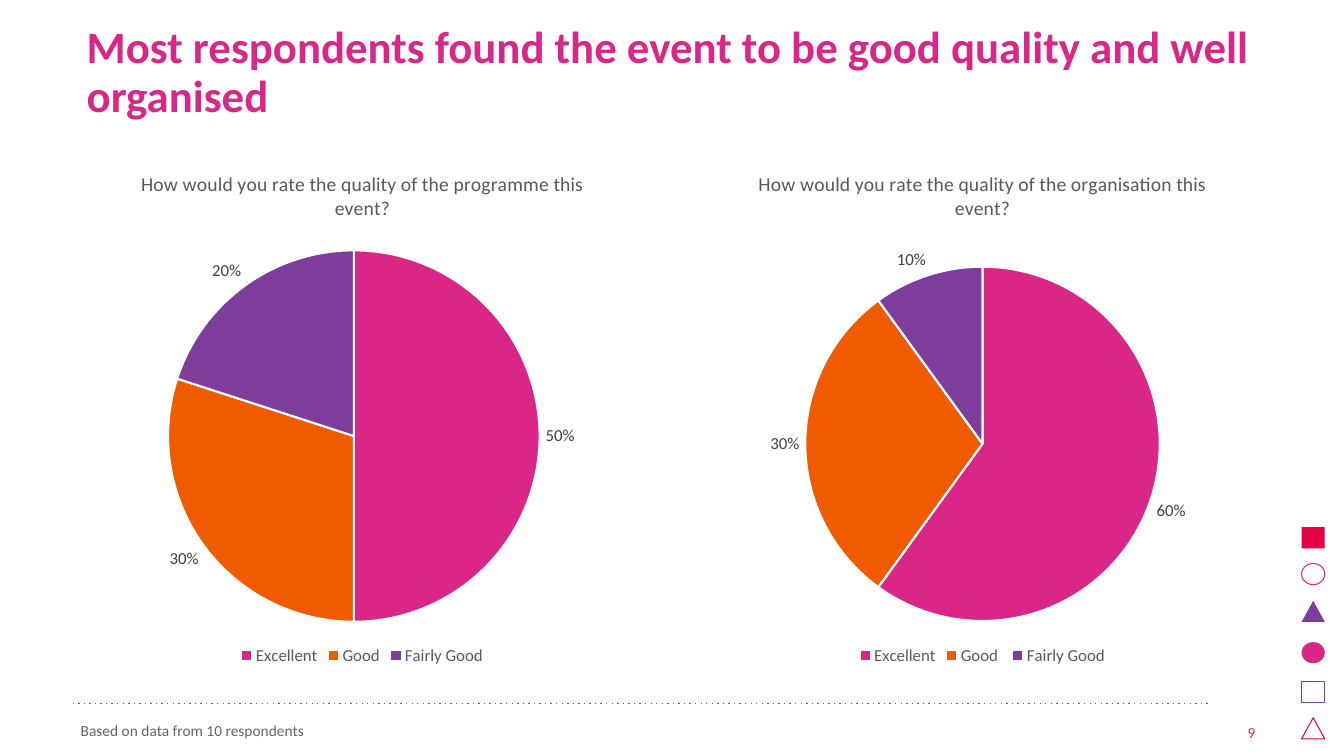
from lxml import etree
from pptx import Presentation
from pptx.chart.data import CategoryChartData
from pptx.dml.color import RGBColor
from pptx.enum.chart import XL_CHART_TYPE, XL_LABEL_POSITION, XL_LEGEND_POSITION
from pptx.enum.shapes import MSO_CONNECTOR, MSO_SHAPE
from pptx.enum.text import MSO_ANCHOR, MSO_AUTO_SIZE, PP_ALIGN
from pptx.oxml import parse_xml
from pptx.oxml.ns import nsdecls, qn
from pptx.util import Pt

PX = 9144  # 100 px to the inch
RECT, OVAL, TRIANGLE = MSO_SHAPE.RECTANGLE, MSO_SHAPE.OVAL, MSO_SHAPE.ISOSCELES_TRIANGLE
PIE, BOTTOM, OUTSIDE = XL_CHART_TYPE.PIE, XL_LEGEND_POSITION.BOTTOM, XL_LABEL_POSITION.OUTSIDE_END
PINK, ORANGE, PURPLE, RED = "DA2686", "F05B00", "7E3C9B", "E50043"
GREY, WHITE = "646464", "FFFFFF"


def style(font, size, color, bold=False):
    font.name, font.size, font.bold = "Calibri", Pt(size), bold
    font.color.rgb = RGBColor.from_string(color)


def write(box, bounds, text, size, color, anchor, bold=False):
    """Place a text shape and fill it with one formatted run."""
    box.left, box.top, box.width, box.height = [v * PX for v in bounds]
    frame = box.text_frame
    frame.word_wrap = True
    frame.auto_size = MSO_AUTO_SIZE.NONE
    frame.vertical_anchor = anchor
    paragraph = frame.paragraphs[0]
    run = paragraph.add_run()
    run.text = text
    style(run.font, size, color, bold)
    return paragraph


prs = Presentation()
prs.slide_width, prs.slide_height = 1333 * PX, 750 * PX
slide = prs.slides.add_slide(prs.slide_layouts[1])
shapes = slide.shapes

# Decorative column: shape, top, colour, filled
for kind, top, color, filled in [
    (RECT, 523, RED, True),
    (OVAL, 559, PINK, False),
    (TRIANGLE, 596, PURPLE, True),
    (OVAL, 637, PINK, True),
    (RECT, 676, PURPLE, False),
    (TRIANGLE, 712, RED, False),
]:
    ornament = shapes.add_shape(kind, 1291 * PX, top * PX, 23 * PX, 21 * PX)
    ornament.shadow.inherit = False
    if filled:
        ornament.fill.solid()
        ornament.fill.fore_color.rgb = RGBColor.from_string(color)
        ornament.line.fill.background()
    else:
        ornament.fill.background()
        ornament.line.color.rgb = RGBColor.from_string(color)
        ornament.line.width = Pt(0.75)

footer_rule = shapes.add_connector(MSO_CONNECTOR.STRAIGHT, 72 * PX, 698 * PX, 1199 * PX, 698 * PX)
footer_rule.line.color.rgb = RGBColor.from_string(GREY)
footer_rule.line.width = Pt(1)
etree.SubElement(footer_rule.line._get_or_add_ln(), qn("a:prstDash"), val="dot")
etree.SubElement(footer_rule._element.spPr, qn("a:effectLst"))

headline = write(shapes.title, (76, 17, 1181, 112),
                 "Most respondents found the event to be good quality and well organised",
                 32, PINK, MSO_ANCHOR.MIDDLE, bold=True)
headline.alignment = PP_ALIGN.LEFT
headline.line_spacing = 0.9

# Left edge, question, categories, values, plot area (x, y, w, h as shares of the chart)
for left, question, ratings, shares, plot_area in [
    (76, "How would you rate the quality of the programme this event?",
     ("Excellent", "Good", "Fairly Good"), (0.5, 0.3, 0.2), (0.16, 0.19, 0.65, 0.72)),
    (691, "How would you rate the quality of the organisation this event?",
     ("Excellent", "Good ", "Fairly Good"), (0.6, 0.3, 0.1), (0.19, 0.22, 0.62, 0.69)),
]:
    data = CategoryChartData(number_format="0%")
    data.categories = ratings
    data.add_series("Series 1", shares)
    chart = shapes.add_chart(PIE, left * PX, 150 * PX, 567 * PX, 514 * PX, data).chart

    chart.has_title = True
    question_run = chart.chart_title.text_frame.paragraphs[0].add_run()
    question_run.text = question
    style(question_run.font, 14, "595959")
    chart.chart_title.include_in_layout = False

    chart.has_legend = True
    chart.legend.position = BOTTOM
    chart.legend.include_in_layout = False
    style(chart.legend.font, 12, "595959")

    plot = chart.plots[0]
    plot.vary_by_categories = True
    for i, color in enumerate((PINK, ORANGE, PURPLE)):
        slice_format = plot.series[0].points[i].format
        slice_format.fill.solid()
        slice_format.fill.fore_color.rgb = RGBColor.from_string(color)
        slice_format.line.color.rgb = RGBColor.from_string(WHITE)
        slice_format.line.width = Pt(1.5)

    plot.has_data_labels = True
    labels = plot.data_labels
    labels.show_value, labels.show_percentage = True, False
    labels.number_format, labels.number_format_is_linked = "0%", False
    labels.position = OUTSIDE
    style(labels.font, 12, "404040")

    settings = "".join(f'<c:{tag}Mode val="edge"/>' for tag in "xy")
    settings += "".join(f'<c:{tag} val="{share}"/>' for tag, share in zip("xywh", plot_area))
    layout = parse_xml(f'<c:layout {nsdecls("c")}><c:manualLayout><c:layoutTarget val="inner"/>'
                       f'{settings}</c:manualLayout></c:layout>')
    plot_element = chart._chartSpace.chart.plotArea
    for automatic in plot_element.findall(qn("c:layout")):
        plot_element.remove(automatic)
    plot_element.insert(0, layout)

sample_note = write(slide.placeholders[1], (70, 694, 1126, 45),
                    "Based on data from 10 respondents", 11, GREY, MSO_ANCHOR.BOTTOM)
sample_note.space_before = Pt(6)
note_properties = sample_note._p.get_or_add_pPr()
note_properties.set("marL", "0")
note_properties.set("indent", "0")
etree.SubElement(note_properties, qn("a:buNone"))

page_number = write(shapes.add_textbox(0, 0, PX, PX), (1212, 701, 43, 40),
                    "9", 11, PINK, MSO_ANCHOR.BOTTOM)
page_number.alignment = PP_ALIGN.RIGHT

prs.save("out.pptx")
